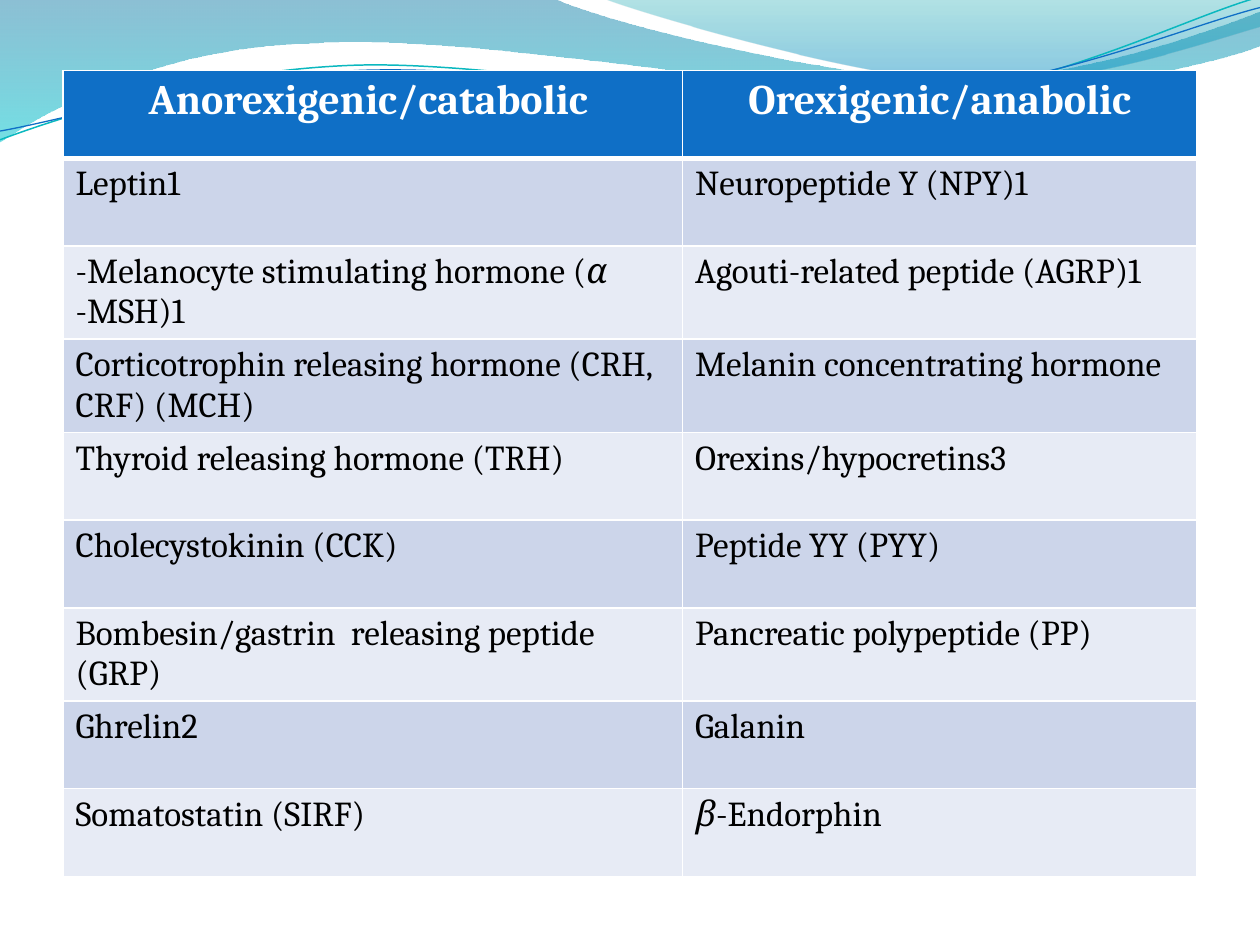
from math import cos, radians, sin
from lxml.etree import SubElement
from pptx import Presentation
from pptx.dml.color import RGBColor
from pptx.enum.text import PP_ALIGN as Align
from pptx.oxml import parse_xml
from pptx.oxml.ns import nsdecls, qn
from pptx.util import Pt

HEADERS = ("Anorexigenic/catabolic ", "Orexigenic/anabolic")
HORMONES = [
    ("Leptin1", "Neuropeptide Y (NPY)1"),
    (("-Melanocyte stimulating hormone (", "α ", "-MSH)1"), "Agouti-related peptide (AGRP)1"),
    ("Corticotrophin releasing hormone (CRH, CRF) (MCH)", "Melanin concentrating hormone"),
    ("Thyroid releasing hormone (TRH)", "Orexins/hypocretins3"),
    ("Cholecystokinin (CCK)", "Peptide YY (PYY)"),
    ("Bombesin/gastrin  releasing peptide (GRP)", "Pancreatic polypeptide (PP)"),
    ("Ghrelin2", "Galanin"),
    ("Somatostatin (SIRF)", ("", "β", "-Endorphin")),
]
COLUMN_WIDTHS = (354, 294)
ROW_HEIGHT, TALL_ROW_HEIGHT = 50.1, 53.3
TALL_ROWS = (2, 3, 6)

WIDE_FRAME = (-0.7, -0.7, 721.4, 82.1)
WIDE_WAVE = [
    (0, 0), (316.8, -0.7),
    (342.7, 12.2, 478.1, 45.4, 545.8, 45.4), (614.2, 45.4, 689.8, 18.7, 720, 6.5),
    (720.7, 25.9),
    (707.8, 31.7, 626.4, 54.7, 537.1, 54), (447.8, 54, 275, 20.2, 185, 24.5),
    (92.9, 25.9, 33.1, 59.8, -0.7, 81.4), (0, 0),
]
RIGHT_FRAME = (344.9, -0.7, 375.1, 50.4)
RIGHT_WAVE = [
    (344.9, -0.7),
    (366.5, 7.9, 491, 44.6, 553.7, 46.8), (616.3, 49.7, 691.9, 23, 720, 15.1),
    (720, 0), (344.9, -0.7),
]
TEAL_FRAME = (-1.4, 15.8, 721.4, 51.1)
TEAL_STRAND = [
    (0, 79.9),
    (34.6, 67, 113.8, 41, 199.4, 37.4), (284.4, 33.8, 427, 64.1, 513.4, 57.6),
    (599.8, 51.1, 675.4, 10.8, 718.6, -1.4),
]
BLUE_FRAME = (-1.4, 21.6, 722.2, 41.8)
BLUE_STRAND = [
    (0, 74.9),
    (33.8, 69.1, 118.1, 44.6, 203.8, 40.3), (290.2, 36.7, 429.8, 60.5, 516.2, 54),
    (601.9, 48.2, 677.5, 15.1, 720, 4.3),
]
STRAND_TILT = -2.7


def color(value):
    return RGBColor.from_string(value)


def to_frame(x, y, frame, tilt):
    left, top, width, height = frame
    dx, dy = x - left - width / 2, y - top - height / 2
    angle = radians(-tilt)
    return (
        dx * cos(angle) - dy * sin(angle) + width / 2,
        dx * sin(angle) + dy * cos(angle) + height / 2,
    )


class SlideWriter:
    font = "Cambria"
    header_fill = "0F6FC6"
    band_fills = ("CCD5EA", "E7EBF5")
    border = "FFFFFF"

    def __init__(self, slide):
        self.slide = slide

    def outline(self, frame, segments, closed, tilt=0):
        left, top, width, height = frame
        builder = self.slide.shapes.build_freeform(Pt(left), Pt(top))
        builder.add_line_segments([(Pt(left + width), Pt(top + height))], close=False)
        shape = builder.convert_to_shape()
        outline = shape._element.xpath(".//a:path")[0]
        for child in list(outline):
            outline.remove(child)
        for index, segment in enumerate(segments):
            command = "a:moveTo" if index == 0 else "a:lnTo" if len(segment) == 2 else "a:cubicBezTo"
            element = SubElement(outline, qn(command))
            for x, y in zip(segment[::2], segment[1::2]):
                local_x, local_y = to_frame(x, y, frame, tilt)
                point = SubElement(element, qn("a:pt"))
                point.set("x", str(int(Pt(local_x))))
                point.set("y", str(int(Pt(local_y))))
        if closed:
            SubElement(outline, qn("a:close"))
        shape.rotation = tilt
        shape.shadow.inherit = False
        return shape

    def wave(self, frame, segments, stops):
        shape = self.outline(frame, segments, True)
        shape.line.fill.background()
        shape.fill.gradient()
        shape.fill.gradient_angle = 270
        for stop, (position, value, _) in zip(shape.fill.gradient_stops, stops):
            stop.position = position
            stop.color.rgb = color(value)
        elements = shape._element.xpath(".//a:gsLst//a:srgbClr")
        for element, (_, _, opacity) in zip(elements, stops):
            SubElement(element, qn("a:alpha")).set("val", str(opacity * 1000))

    def strand(self, frame, segments, value, width):
        shape = self.outline(frame, segments, False, STRAND_TILT)
        shape.fill.background()
        shape.line.color.rgb = color(value)
        shape.line.width = Pt(width)
        return shape

    def group(self, shapes):
        self.slide.shapes.add_group_shape(shapes)

    def borders(self, cell, bottom):
        properties = cell._tc.get_or_add_tcPr()
        widths = {"lnL": 1, "lnR": 1, "lnT": 1, "lnB": bottom}
        for index, (side, width) in enumerate(widths.items()):
            properties.insert(index, parse_xml(
                f'<a:{side} {nsdecls("a")} w="{Pt(width)}"><a:solidFill>'
                f'<a:srgbClr val="{self.border}"/></a:solidFill></a:{side}>'
            ))

    def cell(self, cell, text, row):
        is_header = row == 0
        paragraph = cell.text_frame.paragraphs[0]
        parts = (text,) if isinstance(text, str) else text
        for index, part in enumerate(parts):
            if part:
                run = paragraph.add_run()
                run.text = part
                run.font.italic = index == 1
        paragraph.alignment = Align.CENTER if is_header else Align.LEFT
        font = paragraph.font
        font.name = self.font
        font.size = Pt(24 if is_header else 20)
        font.bold = is_header
        font.color.rgb = color("FFFFFF" if is_header else "000000")
        cell.fill.solid()
        cell.fill.fore_color.rgb = color(self.header_fill if is_header else self.band_fills[(row - 1) % 2])
        self.borders(cell, 3 if is_header else 1)

    def table(self, left, top, rows):
        heights = [TALL_ROW_HEIGHT if row in TALL_ROWS else ROW_HEIGHT for row in range(len(rows))]
        table = self.slide.shapes.add_table(
            len(rows), len(COLUMN_WIDTHS), Pt(left), Pt(top), Pt(sum(COLUMN_WIDTHS)), Pt(sum(heights))
        ).table
        for column, width in zip(table.columns, COLUMN_WIDTHS):
            column.width = Pt(width)
        for row, (texts, height) in enumerate(zip(rows, heights)):
            table.rows[row].height = Pt(height)
            for column, text in enumerate(texts):
                self.cell(table.cell(row, column), text, row)


def main():
    presentation = Presentation()
    presentation.slide_width, presentation.slide_height = Pt(720), Pt(540)
    writer = SlideWriter(presentation.slides.add_slide(presentation.slide_layouts[6]))
    writer.wave(WIDE_FRAME, WIDE_WAVE, [(0, "0074A1", 45), (1, "00C6CF", 55)])
    writer.wave(RIGHT_FRAME, RIGHT_WAVE, [(0, "00A1A9", 30), (0.8, "008BBF", 45)])
    writer.group([
        writer.strand(TEAL_FRAME, TEAL_STRAND, "0AB8BF", 0.85),
        writer.strand(BLUE_FRAME, BLUE_STRAND, "0F6FC6", 0.75),
    ])
    writer.table(36, 40.3, [HEADERS, *HORMONES])
    presentation.save("out.pptx")


if __name__ == "__main__":
    main()
